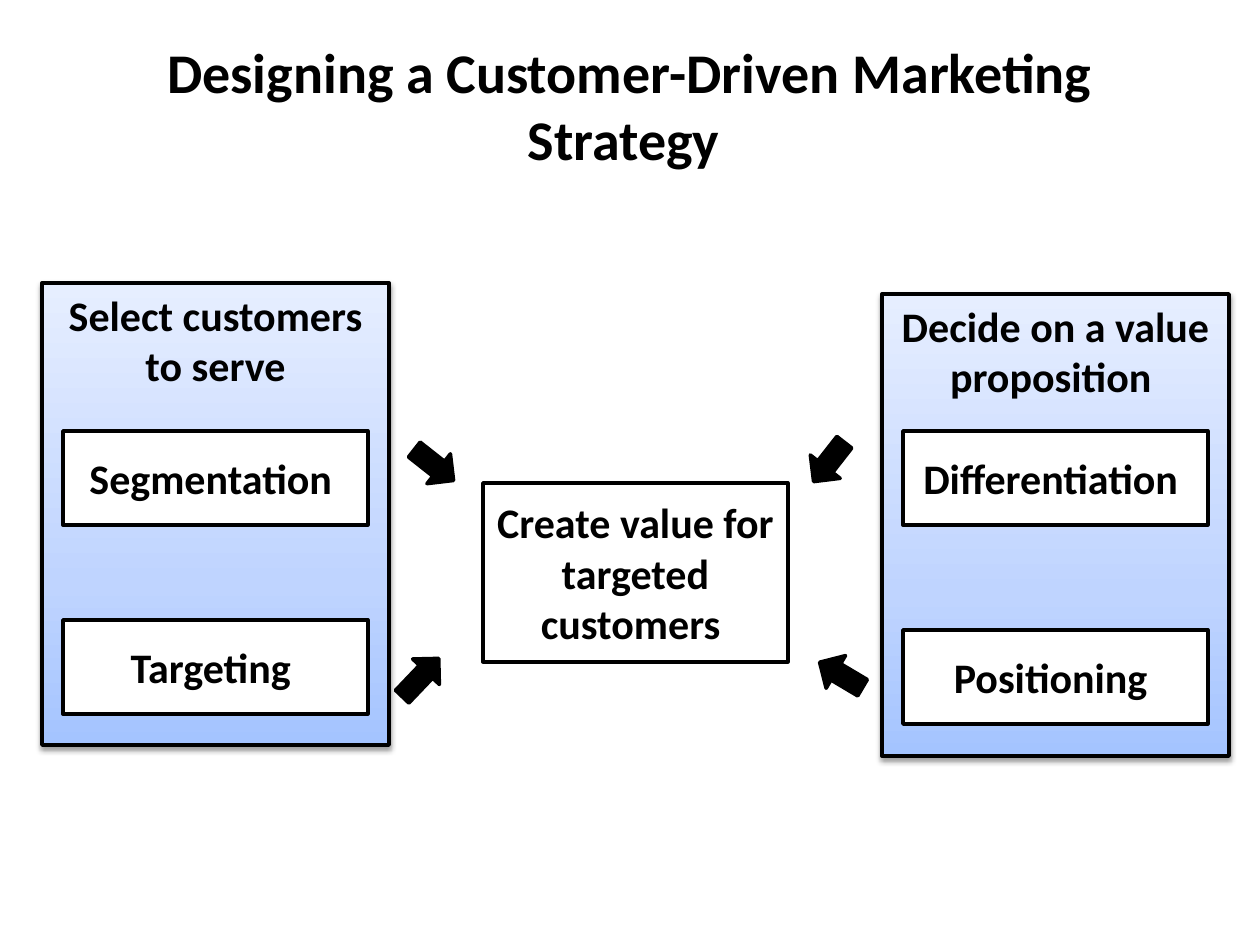
from lxml import etree
from pptx import Presentation
from pptx.dml.color import RGBColor
from pptx.enum.shapes import MSO_SHAPE
from pptx.enum.text import MSO_ANCHOR, PP_ALIGN
from pptx.oxml import parse_xml
from pptx.util import Emu, Pt

RECT, DOWN, RIGHT = MSO_SHAPE.RECTANGLE, MSO_SHAPE.DOWN_ARROW, MSO_SHAPE.RIGHT_ARROW
TOP, MIDDLE, CENTER = MSO_ANCHOR.TOP, MSO_ANCHOR.MIDDLE, PP_ALIGN.CENTER
PX = 914400 // 126
NS = "http://schemas.openxmlformats.org/drawingml/2006/main"
BLACK, WHITE = "000000", "FFFFFF"

# Content: text, then left and top (and size where it varies)
TITLE = "Designing a Customer-Driven Marketing Strategy "
GOAL = ("Create value for targeted customers ", 483, 483)
PANELS = [
    ("Select customers to serve", 42, 283, [("Segmentation ", 431), ("Targeting ", 620)]),
    ("Decide on a value proposition ", 882, 294, [("Differentiation ", 431), ("Positioning ", 630)]),
]
ARROWS = [  # shape, left, top, width, height, turn
    (DOWN, 810, 437, 38, 50, 38),
    (DOWN, 415, 440, 38, 50, 308.2),
    (RIGHT, 394, 659, 53, 37, 313.7),
    (DOWN, 822, 650, 38, 50, 120.7),
]
STOPS = [(0, "A4C4FF"), (35, "BFD4FF"), (100, "E6EEFF")]
PANEL_W, PANEL_H = 347, 462
BOX_W, BOX_H, GOAL_H = 305, 94, 179
INSET = (PANEL_W - BOX_W) // 2


def rgb(code):
    return RGBColor.from_string(code)


def px(*nums):
    return [Emu(n * PX) for n in nums]


def write(shape, text, size, anchor=MIDDLE):
    frame = shape.text_frame
    frame.word_wrap = True
    frame.vertical_anchor = anchor
    para = frame.paragraphs[0]
    para.text = text
    para.alignment = CENTER
    font = para.font
    font.name, font.size, font.bold = "Calibri", Pt(size), True
    font.color.rgb = rgb(BLACK)


def draw(kind, left, top, width, height, fill=WHITE, line=2):
    shape = slide.shapes.add_shape(kind, *px(left, top, width, height))
    shape.shadow.inherit = False
    shape.fill.solid()
    shape.fill.fore_color.rgb = rgb(fill)
    shape.line.color.rgb = rgb(BLACK)
    shape.line.width = Pt(line)
    return shape


def shade(shape):
    """Give a panel its three-stop gradient and soft shadow."""
    shape.fill.gradient()
    shape.fill.gradient_angle = 90
    props = shape._element.spPr
    stops = props.find(f".//{{{NS}}}gsLst")
    for old in list(stops):
        stops.remove(old)
    for pos, code in STOPS:
        stop = etree.SubElement(stops, f"{{{NS}}}gs", pos=str(pos * 1000))
        etree.SubElement(stop, f"{{{NS}}}srgbClr", val=code)
    props.find(f"{{{NS}}}effectLst").append(parse_xml(
        f'<a:outerShdw xmlns:a="{NS}" blurRad="40000" dist="20000" dir="5400000" rotWithShape="0">'
        f'<a:srgbClr val="{BLACK}"><a:alpha val="38000"/></a:srgbClr></a:outerShdw>'))


deck = Presentation()
deck.slide_width, deck.slide_height = px(1260, 945)
slide = deck.slides.add_slide(deck.slide_layouts[5])

# Title
title = slide.shapes.title
title.left, title.top, title.width, title.height = px(63, 31, 1134, 147)
write(title, TITLE, 32)

# Goal in the centre
text, left, top = GOAL
write(draw(RECT, left, top, BOX_W, GOAL_H), text, 24)

# Side panels with their steps
for head, left, top, steps in PANELS:
    panel = draw(RECT, left, top, PANEL_W, PANEL_H, line=2.25)
    shade(panel)
    write(panel, head, 24, TOP)
    for text, y in steps:
        write(draw(RECT, left + INSET, y, BOX_W, BOX_H), text, 24)

# Arrows towards the goal
for kind, left, top, width, height, turn in ARROWS:
    draw(kind, left, top, width, height, BLACK).rotation = turn

deck.save("out.pptx")
